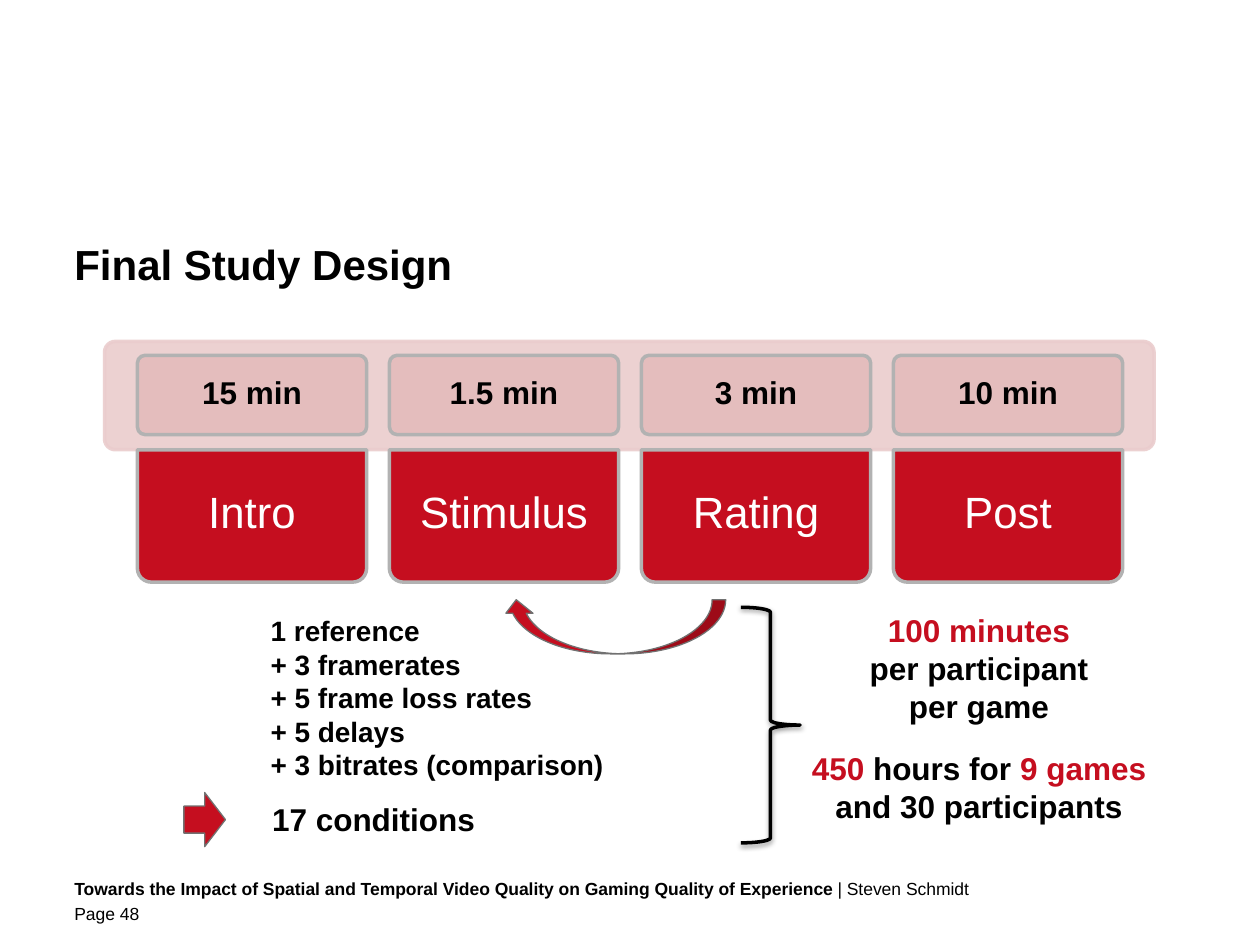
"""Build the Final Study Design slide: four timed phases, the conditions and the total effort."""
from dataclasses import dataclass

from lxml import etree
from pptx import Presentation
from pptx.dml.color import RGBColor
from pptx.enum.shapes import MSO_SHAPE
from pptx.enum.text import MSO_ANCHOR, MSO_AUTO_SIZE, PP_ALIGN
from pptx.oxml.ns import qn
from pptx.util import Inches, Pt

LEFT, CENTER = PP_ALIGN.LEFT, PP_ALIGN.CENTER
TOP, MIDDLE, BOTTOM = MSO_ANCHOR.TOP, MSO_ANCHOR.MIDDLE, MSO_ANCHOR.BOTTOM
GROW, FIXED = MSO_AUTO_SIZE.SHAPE_TO_FIT_TEXT, MSO_AUTO_SIZE.NONE
ROUNDED, BOTTOM_ROUNDED = MSO_SHAPE.ROUNDED_RECTANGLE, MSO_SHAPE.ROUND_2_SAME_RECTANGLE
LOOP_ARROW, RIGHT_ARROW, BRACE = MSO_SHAPE.CURVED_UP_ARROW, MSO_SHAPE.RIGHT_ARROW, MSO_SHAPE.RIGHT_BRACE


@dataclass(frozen=True)
class Theme:
    font: str = "Arial"
    ink: str = "000000"
    white: str = "FFFFFF"
    red: str = "C50E1F"
    band: str = "EACCCD"
    pink: str = "E4BDBD"
    border: str = "B2B2B2"
    arrow_edge: str = "717171"
    title: int = 24
    phase: int = 25
    strong: int = 18
    listing: int = 16
    footer: int = 10


theme = Theme()


def write(box, paragraphs, size, align=LEFT, anchor=TOP, inset=None, autosize=GROW, wrap=True):
    """Fill a box with paragraphs, each a list of (text, colour, bold) runs."""
    frame = box.text_frame
    frame.word_wrap = wrap
    frame.auto_size = autosize
    frame.vertical_anchor = anchor
    if inset is not None:
        frame.margin_left = frame.margin_right = Inches(inset)
        frame.margin_top = frame.margin_bottom = Inches(inset)
    for index, runs in enumerate(paragraphs):
        paragraph = frame.add_paragraph() if index else frame.paragraphs[0]
        paragraph.alignment = align
        for text, color, bold in runs:
            run = paragraph.add_run()
            run.text = text
            run.font.name = theme.font
            run.font.size = Pt(size)
            run.font.bold = bold
            run.font.color.rgb = RGBColor.from_string(color)
    return frame.paragraphs


def draw(kind, at, fill, line, width):
    """Add a preset shape with its fill and outline."""
    shape = slide.shapes.add_shape(kind, *map(Inches, at))
    shape.shadow.inherit = False
    if fill:
        shape.fill.solid()
        shape.fill.fore_color.rgb = RGBColor.from_string(fill)
    else:
        shape.fill.background()
    shape.line.color.rgb = RGBColor.from_string(line)
    shape.line.width = Pt(width)
    return shape


deck = Presentation()
deck.slide_width, deck.slide_height = Inches(10), Inches(7.5)
slide = deck.slides.add_slide(deck.slide_layouts[5])

title = slide.shapes.title
title.left, title.top, title.width, title.height = map(Inches, (0.59, 1.9, 8.82, 0.39))
heading = write(title, [[("Final Study Design", theme.ink, True)]], theme.title, anchor=BOTTOM, inset=0)
heading[0].line_spacing = Pt(30)

footer_lines = [
    [("Towards the Impact of Spatial and Temporal Video Quality on Gaming Quality of Experience ", theme.ink, True),
     ("| Steven Schmidt", theme.ink, False)],
    [("Page 48", theme.ink, False)],
]
for row, runs in enumerate(footer_lines):
    footer = slide.shapes.add_textbox(*map(Inches, (0.59, 6.97 + 0.2 * row, 7.24, 0.17)))
    write(footer, [runs], theme.footer, inset=0, autosize=FIXED)

time_band = draw(ROUNDED, (0.83, 2.71, 8.33, 0.86), theme.band, theme.band, 2)
time_band.adjustments[0] = 0.1
for color in time_band._element.spPr.iter(qn("a:srgbClr")):
    etree.SubElement(color, qn("a:alpha"), val="90000")

phases = [("Intro", "15 min"), ("Stimulus", "1.5 min"), ("Rating", "3 min"), ("Post", "10 min")]
for column, (phase, duration) in enumerate(phases):
    left = 1.09 + 2 * column
    time_card = draw(ROUNDED, (left, 2.82, 1.82, 0.63), theme.pink, theme.border, 2)
    time_card.adjustments[0] = 0.1
    phase_card = draw(BOTTOM_ROUNDED, (left, 3.57, 1.82, 1.05), theme.red, theme.border, 2)
    phase_card.adjustments[0] = 0.105
    phase_card.rotation = 180
    phase_label = slide.shapes.add_textbox(*map(Inches, (left + 0.03, 3.57, 1.76, 1.02)))
    label_lines = write(phase_label, [[(phase, theme.white, False)]], theme.phase,
                        CENTER, MIDDLE, inset=0.19, autosize=FIXED)
    label_lines[0].line_spacing = 0.9
    time_label = slide.shapes.add_textbox(*map(Inches, (left + 0.36, 2.91, 1.1, 0.4)))
    write(time_label, [[(duration, theme.ink, True)]], theme.strong, CENTER, wrap=False)

repeat_arrow = draw(LOOP_ARROW, (3.99, 4.76, 1.77, 0.43), theme.red, theme.arrow_edge, 0.75)
repeat_arrow._element.spPr.get_or_add_xfrm().set("flipH", "1")

condition_lines = ["1 reference", "+ 3 framerates", "+ 5 frame loss rates", "+ 5 delays", "+ 3 bitrates (comparison)"]
conditions = slide.shapes.add_textbox(*map(Inches, (2.05, 4.82, 4.8, 1.45)))
write(conditions, [[(line, theme.ink, True)] for line in condition_lines], theme.listing)

draw(RIGHT_ARROW, (1.46, 6.29, 0.33, 0.43), theme.red, theme.arrow_edge, 0.75)
condition_total = slide.shapes.add_textbox(*map(Inches, (2.05, 6.3, 1.83, 0.4)))
write(condition_total, [[("17 conditions", theme.ink, True)]], theme.strong, CENTER, wrap=False)

brace = draw(BRACE, (5.88, 4.82, 0.47, 1.87), None, theme.ink, 2)
brace_shadow = etree.SubElement(
    brace._element.spPr.find(qn("a:effectLst")), qn("a:outerShdw"),
    blurRad=str(Pt(3.1)), dist=str(Pt(1.6)), dir="5400000", rotWithShape="0")
shadow_color = etree.SubElement(brace_shadow, qn("a:srgbClr"), val=theme.ink)
etree.SubElement(shadow_color, qn("a:alpha"), val="38000")

effort = slide.shapes.add_textbox(*map(Inches, (6.14, 4.8, 3.26, 1.82)))
effort_lines = write(effort, [
    [("100 minutes", theme.red, True)],
    [("per participant", theme.ink, True)],
    [("per game", theme.ink, True)],
    [("450", theme.red, True), (" hours for ", theme.ink, True),
     ("9 games", theme.red, True), (" and 30 participants", theme.ink, True)],
], theme.strong, CENTER)
effort_lines[3].space_before = Pt(14)

deck.save("out.pptx")
